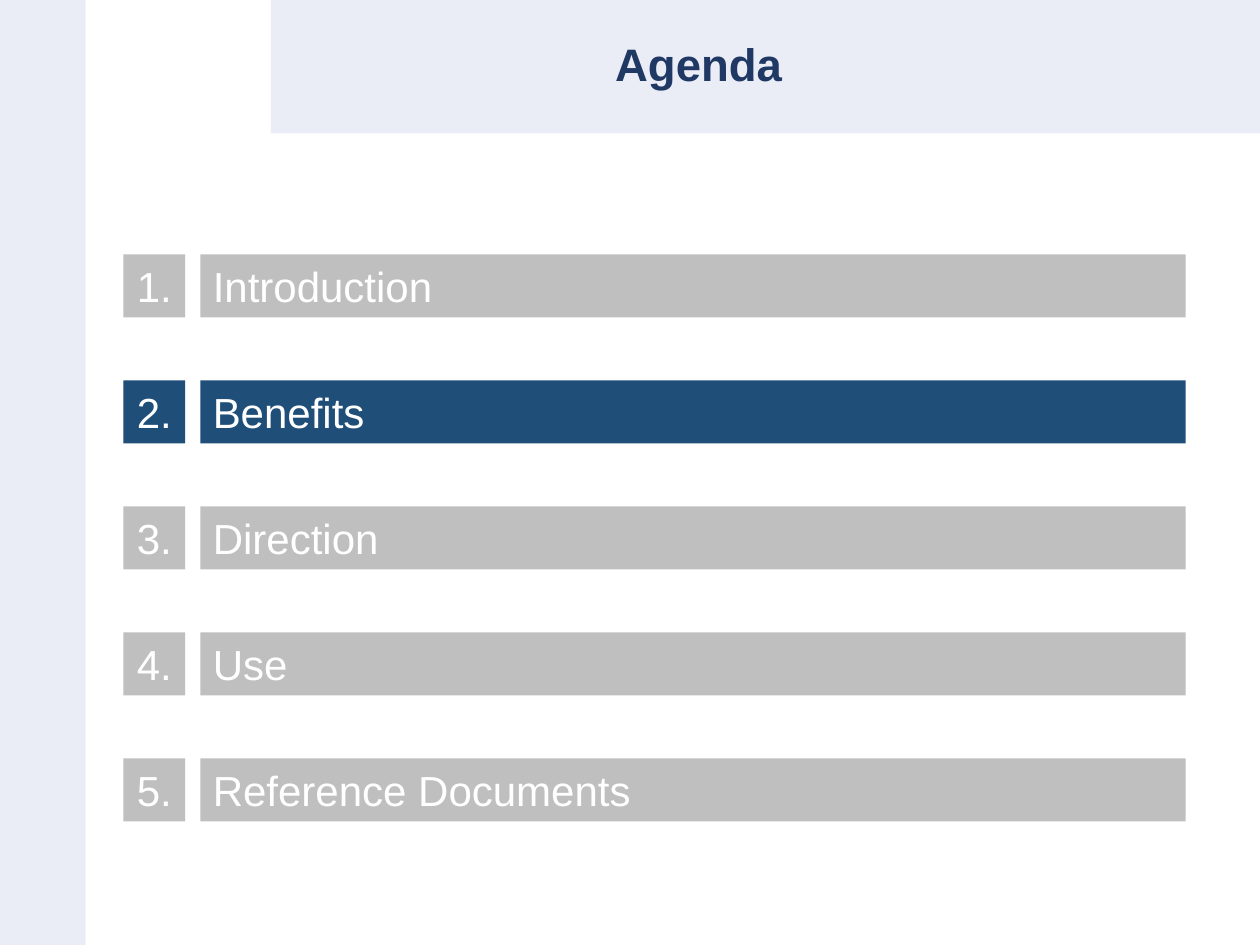
from dataclasses import dataclass

from pptx import Presentation
from pptx.dml.color import RGBColor
from pptx.enum.shapes import MSO_SHAPE
from pptx.enum.text import MSO_ANCHOR, PP_ALIGN
from pptx.util import Inches, Pt


@dataclass(frozen=True)
class Theme:
    """Colours, font and type sizes of the slide."""
    band: RGBColor = RGBColor.from_string("EAEDF6")
    title: RGBColor = RGBColor.from_string("203864")
    active: RGBColor = RGBColor.from_string("1F4E79")
    idle: RGBColor = RGBColor.from_string("BFBFBF")
    text: RGBColor = RGBColor.from_string("FFFFFF")
    font: str = "Arial"
    title_size: int = 26
    item_size: int = 24


THEME = Theme()
TOPICS = ["Introduction", "Benefits", "Direction", "Use", "Reference Documents"]
CURRENT = "Benefits"
FIRST_TOP, ROW_STEP, ROW_HEIGHT = 2.02, 1, 0.5


def write(shape, text, size, color, align, bold=False):
    """Put one formatted, vertically centred paragraph in a shape."""
    tf = shape.text_frame
    tf.word_wrap = True
    tf.vertical_anchor = MSO_ANCHOR.MIDDLE
    p = tf.paragraphs[0]
    p.alignment = align
    r = p.add_run()
    r.text = text
    for name, value in {"name": THEME.font, "size": Pt(size), "bold": bold}.items():
        setattr(r.font, name, value)
    r.font.color.rgb = color
    return p


def add_box(s, left, top, width, height, fill):
    """Add a flat rectangle without outline."""
    box = s.shapes.add_shape(MSO_SHAPE.RECTANGLE, Inches(left), Inches(top),
                             Inches(width), Inches(height))
    box.shadow.inherit = False
    box.fill.solid()
    box.fill.fore_color.rgb = fill
    box.line.fill.background()
    return box


def add_title(s, text):
    """Format the title placeholder and bring it in front of the bands."""
    title = s.shapes.title
    place = {"left": 1.59, "top": 0, "width": 7.91, "height": 1.06}
    for name, value in place.items():
        setattr(title, name, Inches(value))
    p = write(title, text, THEME.title_size, THEME.title, PP_ALIGN.CENTER, bold=True)
    p.line_spacing = 0.9
    title.element.getparent().append(title.element)


def add_topic(s, number, topic):
    """Add one agenda row: a number box and a topic bar."""
    top = FIRST_TOP + (number - 1) * ROW_STEP
    fill = THEME.active if topic == CURRENT else THEME.idle
    cells = [(0.98, 0.49, f"{number}.", PP_ALIGN.CENTER),
             (1.59, 7.82, topic, PP_ALIGN.LEFT)]
    for left, width, text, align in cells:
        box = add_box(s, left, top, width, ROW_HEIGHT, fill)
        write(box, text, THEME.item_size, THEME.text, align)


def main():
    """Build the agenda slide."""
    prs = Presentation()
    prs.slide_width, prs.slide_height = Inches(10), Inches(7.5)
    s = prs.slides.add_slide(prs.slide_layouts[5])
    add_box(s, 0, 0, 0.68, 7.5, THEME.band)
    add_box(s, 2.15, 0, 7.85, 1.06, THEME.band)
    add_title(s, "Agenda")
    for number, topic in enumerate(TOPICS, 1):
        add_topic(s, number, topic)
    prs.save("out.pptx")


if __name__ == "__main__":
    main()
